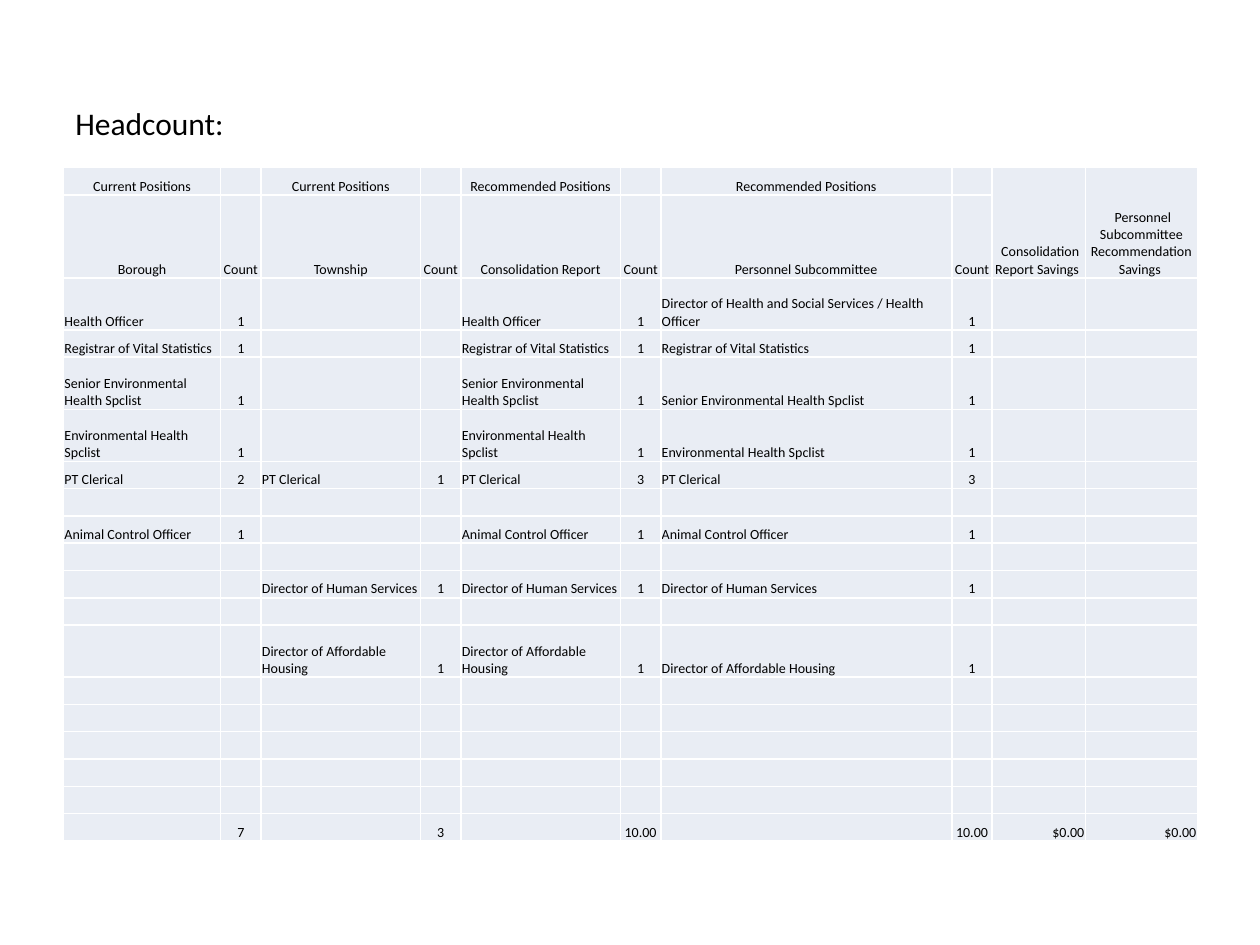
from pptx import Presentation
from pptx.util import Cm, Pt
from pptx.dml.color import RGBColor as Rgb
from pptx.enum.text import PP_ALIGN as Align, MSO_ANCHOR as Anchor
from lxml.etree import SubElement
from pptx.oxml.ns import qn

HUES = {"text": "000000", "cell": "E9EDF4", "rule": "FFFFFF"}
FONT = "Calibri"


def add_run(para, text, size):
    run = para.add_run()
    run.text = text
    run.font.name = FONT
    run.font.size = Pt(size)
    run.font.color.rgb = Rgb.from_string(HUES["text"])


def add_rules(cell):
    props = cell._tc.get_or_add_tcPr()
    for side in ("lnL", "lnR", "lnT", "lnB"):
        line = SubElement(props, qn("a:" + side), w=str(Pt(1)))
        fill = SubElement(line, qn("a:solidFill"))
        SubElement(fill, qn("a:srgbClr"), val=HUES["rule"])


deck = Presentation()
deck.slide_width, deck.slide_height = Cm(25.4), Cm(19.05)
slide = deck.slides.add_slide(deck.slide_layouts[6])

# Table content: position and count for each of the four groups, then savings
human = "Director of Human Services"
house = "Director of Affordable Housing"
chief = "Director of Health and Social Services / Health Officer"
now, plan = "Current Positions", "Recommended Positions"
blank = []


def_rows = [
    [now, "", now, "", plan, "", plan, "",
     " Consolidation Report Savings ",
     " Personnel Subcommittee Recommendation Savings "],
    ["Borough", "Count", "Township", "Count", "Consolidation Report", "Count",
     "Personnel Subcommittee", "Count"],
    ["Health Officer", "1", "", "", "Health Officer", "1", chief, "1"],
]
for job in ("Registrar of Vital Statistics",
            "Senior Environmental Health Spclist",
            "Environmental Health Spclist"):
    def_rows.append([job, "1", "", "", job, "1", job, "1"])
clerk, animal = "PT Clerical", "Animal Control Officer"
def_rows += [
    [clerk, "2", clerk, "1", clerk, "3", clerk, "3"],
    blank,
    [animal, "1", "", "", animal, "1", animal, "1"],
    blank,
    ["", "", human, "1", human, "1", human, "1"],
    blank,
    ["", "", house, "1", house, "1", house, "1"],
    *[blank] * 5,
    ["", "7", "", "3", "", "10.00", "", "10.00", "$0.00", "$0.00"],
]

# Table grid
wide = [3.17, 0.81, 3.22, 0.81, 3.22, 0.81, 5.87, 0.81, 1.88, 2.26]
tall = [0.55] * len(def_rows)
tall[1] = 1.67
for row in (2, 4, 5, 12):
    tall[row] = 1.05
frame = slide.shapes.add_table(len(tall), len(wide), Cm(1.28), Cm(3.38),
                               Cm(sum(wide)), Cm(sum(tall)))
table = frame.table
table.first_row = table.horz_banding = False
for col, size in zip(table.columns, wide):
    col.width = Cm(size)
for row, size in zip(table.rows, tall):
    row.height = Cm(size)

# Cells
for r, words in enumerate(def_rows):
    for c in range(len(wide)):
        cell = table.cell(r, c)
        add_rules(cell)
        cell.fill.solid()
        cell.fill.fore_color.rgb = Rgb.from_string(HUES["cell"])
        cell.margin_left = cell.margin_right = cell.margin_top = Cm(0.02)
        cell.margin_bottom = 0
        cell.vertical_anchor = Anchor.BOTTOM
        para = cell.text_frame.paragraphs[0]
        text = words[c] if c < len(words) else ""
        if not text:
            SubElement(para._p, qn("a:endParaRPr"), sz="800")
            continue
        if r < 2 or c in (1, 3, 5, 7):
            para.alignment = Align.CENTER
        elif c > 7:
            para.alignment = Align.RIGHT
        add_run(para, text, 8)

# Savings headings span both header rows
for c in (8, 9):
    table.cell(0, c).merge(table.cell(1, c))

# Title
box = slide.shapes.add_textbox(Cm(1.27), Cm(1.98), Cm(17.15), Cm(1.03))
box.text_frame.word_wrap = True
add_run(box.text_frame.paragraphs[0], "Headcount:", 18)

deck.save("out.pptx")
